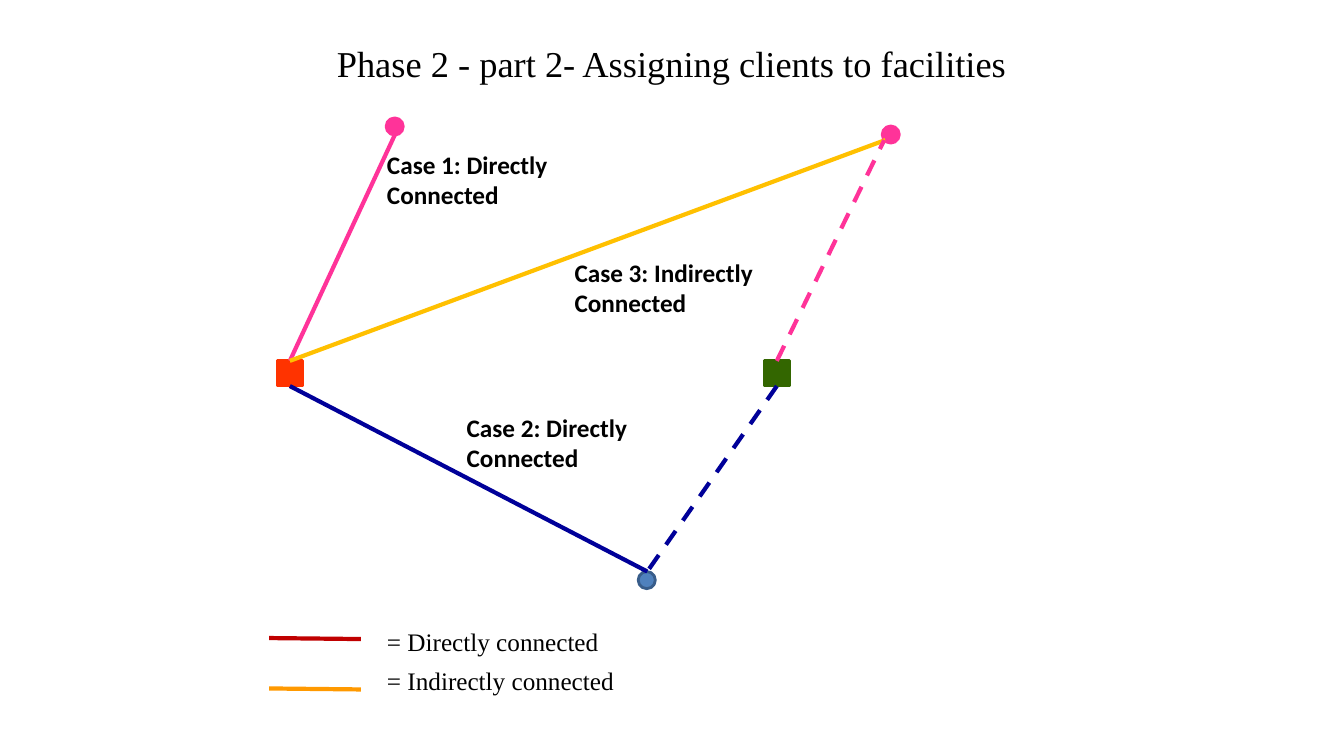
"""Build the slide on assigning clients to facilities."""
from lxml import etree
from pptx import Presentation
from pptx import util as u
from pptx.dml import color
from pptx.enum import dml, shapes, text
from pptx.oxml import ns

PINK, NAVY, AMBER = "FF3399", "000099", "FFC000"
SQUARE, CIRCLE = 0.25, 0.17
TOP, BOTTOM = 0, 2
CASE_FONT = {"name": "Calibri", "size": u.Pt(18), "bold": True}
LEGEND_FONT = {"name": "Times New Roman", "size": u.Pt(18), "bold": False}
TITLE_FONT = {"name": "Times New Roman", "size": u.Pt(26), "bold": False}


def rgb(value):
    """Return the colour for a hex string."""
    return color.RGBColor.from_string(value)


def set_values(target, values):
    """Set each named attribute of the target."""
    for name, value in values.items():
        setattr(target, name, value)


def write(shape, lines, font, frame_values, paragraph_values):
    """Write one paragraph per line in a single format."""
    frame = shape.text_frame
    set_values(frame, frame_values)
    frame.text = "\n".join(lines)
    for paragraph in frame.paragraphs:
        set_values(paragraph, paragraph_values)
        set_values(paragraph.font, font)
        paragraph.font.color.rgb = rgb("000000")


def add_label(slide, box, lines, font, wrap, space=0):
    """Add a left-aligned text box."""
    label = slide.shapes.add_textbox(*map(u.Inches, box))
    write(label, lines, font,
          {"word_wrap": wrap, "auto_size": text.MSO_AUTO_SIZE.SHAPE_TO_FIT_TEXT},
          {"alignment": text.PP_ALIGN.LEFT, "space_before": u.Pt(space)})


def add_node(slide, kind, left, top, size, fill, outline=None):
    """Add a filled square or circle for a facility or client."""
    node = slide.shapes.add_shape(kind, *map(u.Inches, (left, top, size, size)))
    node.shadow.inherit = False
    node.fill.solid()
    node.fill.fore_color.rgb = rgb(fill)
    node.line.color.rgb = rgb(outline or fill)
    node.line.width = u.Pt(2)
    return node


def add_line(slide, start, end, colour, dashed=False):
    """Add a straight line without a shadow."""
    line = slide.shapes.add_connector(
        shapes.MSO_CONNECTOR.STRAIGHT, *map(u.Inches, (*start, *end)))
    line.line.color.rgb = rgb(colour)
    line.line.width = u.Pt(3)
    if dashed:
        line.line.dash_style = dml.MSO_LINE.DASH
    etree.SubElement(line._element.spPr, ns.qn("a:effectLst"))
    return line


def add_title(slide, box):
    """Place and format the title."""
    title = slide.shapes.title
    names = ("left", "top", "width", "height")
    set_values(title, dict(zip(names, map(u.Inches, box))))
    write(title, ["Phase 2 - part 2- Assigning clients to facilities"], TITLE_FONT,
          {"word_wrap": True, "auto_size": text.MSO_AUTO_SIZE.NONE,
           "vertical_anchor": text.MSO_ANCHOR.MIDDLE},
          {"alignment": text.PP_ALIGN.CENTER})


def add_network(slide, left, top):
    """Draw facilities, clients, their links and the case labels."""
    square = shapes.MSO_SHAPE.RECTANGLE
    circle = shapes.MSO_SHAPE.FLOWCHART_CONNECTOR
    red = add_node(slide, square, left, top + 2.41, SQUARE, "FF3300")
    green = add_node(slide, square, left + 4.83, top + 2.41, SQUARE, "336600")
    add_node(slide, circle, left + 3.58, top + 4.5, CIRCLE, "4F81BD", "385D8A")
    add_node(slide, circle, left + 6, top + 0.08, CIRCLE, PINK)
    add_node(slide, circle, left + 1.08, top, CIRCLE, PINK)

    links = [
        (red, TOP, (1.17, 0.16), PINK, False),
        (red, BOTTOM, (3.67, 4.5), NAVY, False),
        (red, TOP, (6.03, 0.22), AMBER, False),
        (green, TOP, (6.02, 0.22), PINK, True),
        (green, BOTTOM, (3.67, 4.5), NAVY, True),
    ]
    for facility, side, (x, y), colour, dashed in links:
        client = (left + x, top + y)
        line = add_line(slide, client, client, colour, dashed)
        line.begin_connect(facility, side)

    cases = [
        (0.99, 0.26, 1.86, "Case 1: Directly"),
        (1.78, 2.87, 1.81, "Case 2: Directly"),
        (2.85, 1.33, 1.98, "Case 3: Indirectly"),
    ]
    for x, y, width, heading in cases:
        add_label(slide, (left + x, top + y, width, 0.71),
                  [heading, "Connected"], CASE_FONT, False)


def add_legend(slide, left, top):
    """Draw the key to the line colours."""
    for row, colour in enumerate(("C00000", "FF9900")):
        y = top + 0.17 + row * 0.5
        add_line(slide, (left, y), (left + 0.91, y + 0.01), colour)
    add_label(slide, (left + 1.07, top, 2.5, 0.81),
              ["= Directly connected", "= Indirectly connected"],
              LEGEND_FONT, True, 6.5)


def main():
    """Build and save the presentation."""
    presentation = Presentation()
    presentation.slide_width = u.Inches(13.33)
    presentation.slide_height = u.Inches(7.5)
    slide = presentation.slides.add_slide(presentation.slide_layouts[5])
    add_title(slide, (2, 0.33, 9.33, 0.58))
    add_network(slide, 2.75, 1.17)
    add_legend(slide, 2.67, 6.16)
    presentation.save("out.pptx")


if __name__ == "__main__":
    main()
